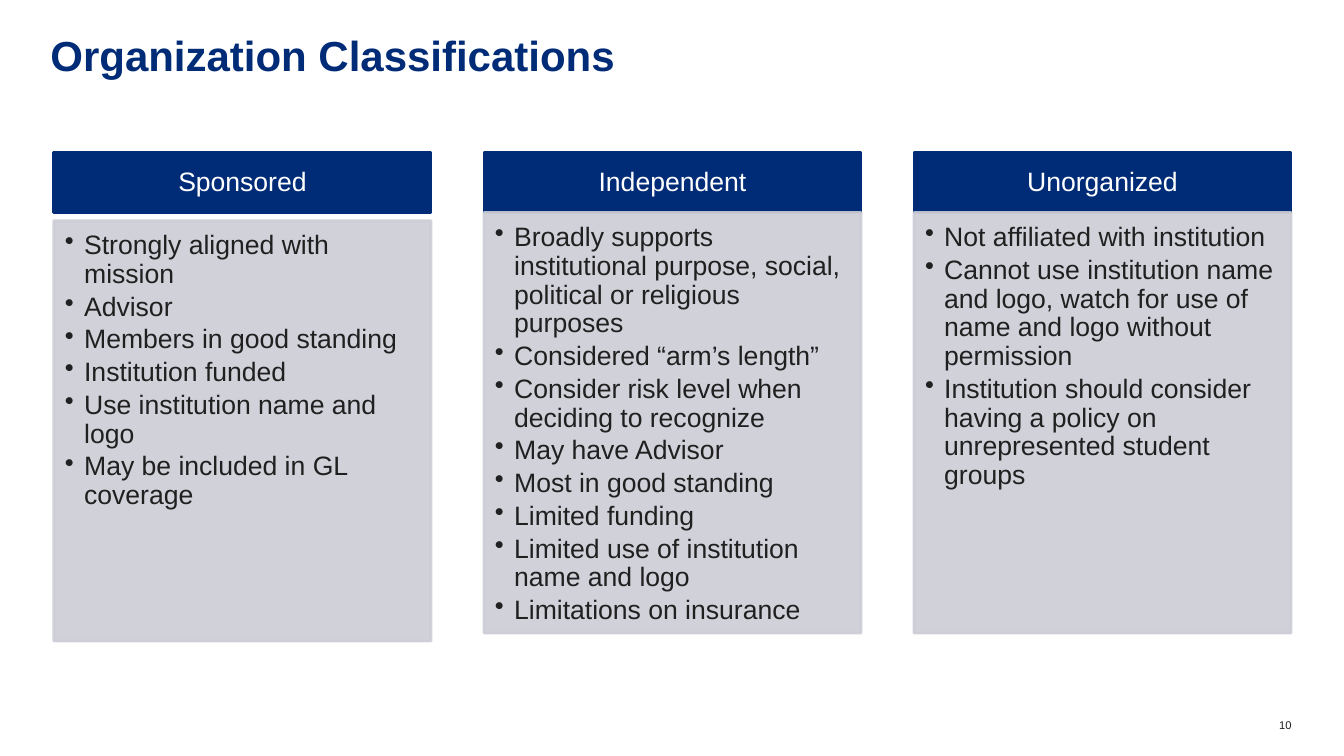
from lxml.etree import SubElement
from pptx import Presentation
from pptx.dml.color import RGBColor
from pptx.enum.shapes import MSO_SHAPE
from pptx.enum.text import MSO_ANCHOR, PP_ALIGN
from pptx.oxml.ns import qn
from pptx.util import Inches, Pt

COLORS = {"navy": "002C77", "grey": "CCCDD6", "ink": "202020", "white": "FFFFFF"}
COLUMN_LEFT, COLUMN_PITCH, COLUMN_WIDTH = 0.535, 4.265, 3.74
HEADER_TOP, HEADER_HEIGHT, BODY_HEIGHT = 1.51, 0.6, 4.17
HEADER_INSETS = (0.15, 0.08, 0.15, 0.08)
BODY_INSETS = (0.11, 0.11, 0.15, 0.17)
BULLET_INDENT = Inches(0.19)

classifications = [
    ("Sponsored", 0.08, [
        "Strongly aligned with mission",
        "Advisor",
        "Members in good standing",
        "Institution funded",
        "Use institution name and logo",
        "May be included in GL coverage",
    ]),
    ("Independent", 0, [
        "Broadly supports institutional purpose, social, political or religious purposes",
        "Considered “arm’s length”",
        "Consider risk level when deciding to recognize",
        "May have Advisor",
        "Most in good standing",
        "Limited funding",
        "Limited use of institution name and logo",
        "Limitations on insurance",
    ]),
    ("Unorganized", 0, [
        "Not affiliated with institution",
        "Cannot use institution name and logo, watch for use of name and logo without permission",
        "Institution should consider having a policy on unrepresented student groups",
    ]),
]


def write_text(box, lines, size, color, insets=(0, 0, 0, 0), align=PP_ALIGN.LEFT,
               anchor=MSO_ANCHOR.TOP, spacing=0.9, after=0, bold=False, bullets=False):
    frame = box.text_frame
    frame.word_wrap = True
    frame.vertical_anchor = anchor
    frame.margin_left, frame.margin_top, frame.margin_right, frame.margin_bottom = map(Inches, insets)
    frame.text = "\n".join(lines)
    for para in frame.paragraphs:
        para.alignment = align
        para.line_spacing = spacing
        para.space_after = Pt(after)
        if bullets:
            properties = para._p.get_or_add_pPr()
            properties.set("marL", str(BULLET_INDENT))
            properties.set("indent", str(-BULLET_INDENT))
            SubElement(properties, qn("a:buChar"), char="•")
        for span in para.runs:
            span.font.name = "Arial"
            span.font.size = Pt(size)
            span.font.bold = bold
            span.font.color.rgb = RGBColor.from_string(COLORS[color])


def add_panel(left, top, height, color, opacity=100):
    panel = page.shapes.add_shape(MSO_SHAPE.RECTANGLE, Inches(left), Inches(top),
                                  Inches(COLUMN_WIDTH), Inches(height))
    panel.shadow.inherit = False
    panel.line.width = Pt(2)
    panel.fill.solid()
    for paint in (panel.fill.fore_color, panel.line.color):
        paint.rgb = RGBColor.from_string(COLORS[color])
    if opacity < 100:
        for swatch in panel._element.spPr.iter(qn("a:srgbClr")):
            SubElement(swatch, qn("a:alpha"), val=str(opacity * 1000))
    return panel


deck = Presentation()
deck.slide_width, deck.slide_height = Inches(13.33), Inches(7.5)
page = deck.slides.add_slide(deck.slide_layouts[6])

title = page.shapes.add_textbox(Inches(0.5), Inches(0.39), Inches(12.31), Inches(0.54))
write_text(title, ["Organization Classifications"], 30, "navy", spacing=0.8, bold=True)

for column, (name, gap, points) in enumerate(classifications):
    left = COLUMN_LEFT + column * COLUMN_PITCH
    header = add_panel(left, HEADER_TOP, HEADER_HEIGHT, "navy")
    write_text(header, [name], 19, "white", HEADER_INSETS, PP_ALIGN.CENTER, MSO_ANCHOR.MIDDLE)
    body = add_panel(left, HEADER_TOP + HEADER_HEIGHT + gap, BODY_HEIGHT, "grey", 90)
    write_text(body, points, 19, "ink", BODY_INSETS, after=2.85, bullets=True)

number = page.shapes.add_textbox(Inches(12.5), Inches(7.13), Inches(0.31), Inches(0.13))
write_text(number, ["10"], 8, "ink", align=PP_ALIGN.RIGHT, spacing=1.0)

deck.save("out.pptx")
